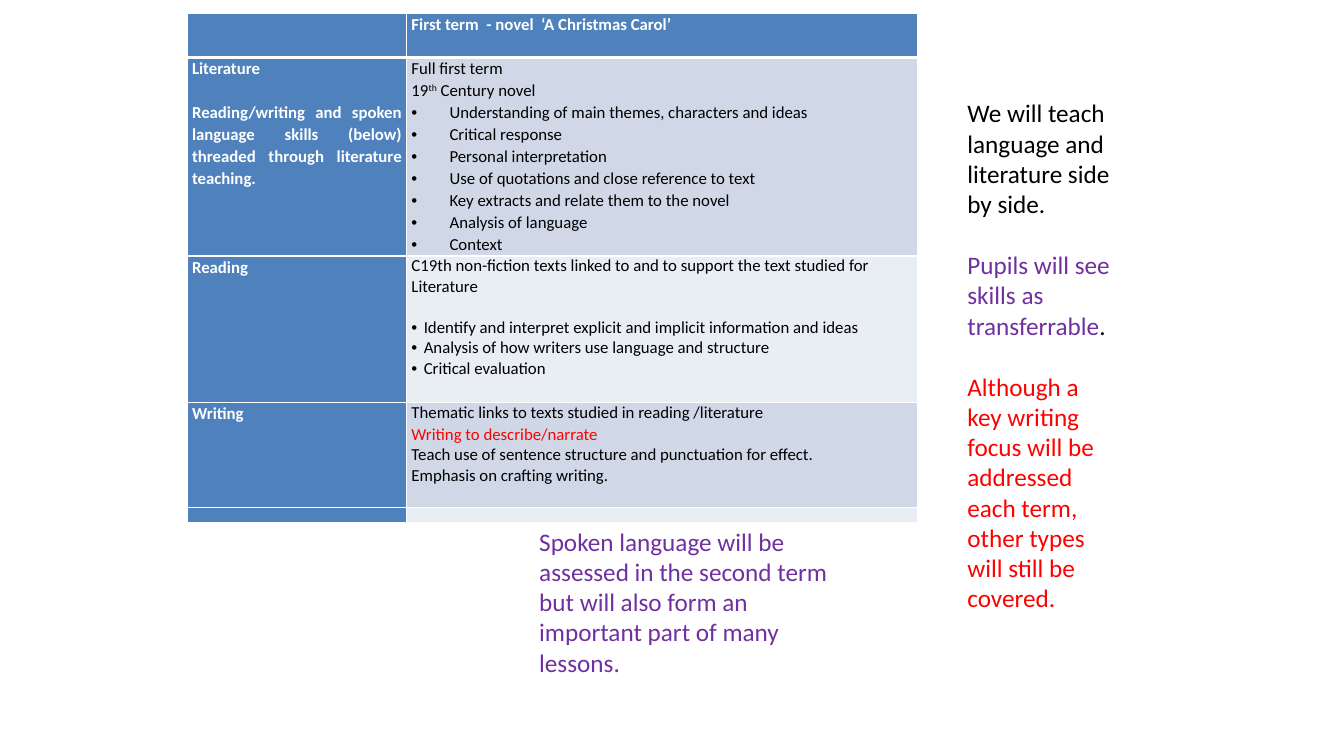
import pptx
import pptx.util
import pptx.dml.color
import pptx.enum.text
import pptx.oxml
from pptx.oxml.ns import nsdecls, qn

Cm, Pt = pptx.util.Cm, pptx.util.Pt
RGB = pptx.dml.color.RGBColor
ALIGN = pptx.enum.text.PP_ALIGN

WHITE = RGB(0xFF, 0xFF, 0xFF)
BLACK = RGB(0x00, 0x00, 0x00)
RED = RGB(0xFF, 0x00, 0x00)
PURPLE = RGB(0x70, 0x30, 0xA0)
BLUE = RGB(0x4F, 0x81, 0xBD)
BAND_DARK = RGB(0xD0, 0xD8, 0xE8)
BAND_LIGHT = RGB(0xE9, 0xED, 0xF4)

# Content: a paragraph is (text, format)
LOOSE = {"spacing": 1.07}
LABEL = {"spacing": 1.07, "bold": True, "color": WHITE}
JUSTIFIED = {**LABEL, "align": ALIGN.JUSTIFY}
WIDE_BULLET = {"spacing": 1.07, "bullet": 0.96}
BULLET = {"bullet": 0.31}

novel_skills = [
    "Understanding of main themes, characters and ideas",
    "Critical response",
    "Personal interpretation",
    "Use of quotations and close reference to text",
    "Key extracts and relate them to the novel",
    "Analysis of language",
    "Context",
]
rows = [  # height in cm, label cell, text cell
    (1.12, [], [("First term  - novel  ‘A Christmas Carol’", LABEL)]),
    (5.0,
     [("Literature", JUSTIFIED),
      ("Reading/writing and spoken language skills (below) threaded through literature teaching.",
       {**JUSTIFIED, "before": 15.7})],
     [("Full first term", LOOSE),
      ([("19", {}), ("th", {"baseline": 30000}), (" Century novel", {})], LOOSE)]
     + [(skill, WIDE_BULLET) for skill in novel_skills]),
    (3.69,
     [("Reading", LABEL)],
     [("C19th non-fiction texts linked to and to support the text studied for Literature", {}),
      ("Identify and interpret explicit and implicit information and ideas",
       {**BULLET, "before": 14.6}),
      ("Analysis of how writers use language and structure", BULLET),
      ("Critical evaluation", BULLET)]),
    (2.64,
     [("Writing", LABEL)],
     [("Thematic links to texts studied in reading /literature", {}),
      ("Writing to describe/narrate", {**LOOSE, "color": RED}),
      ("Teach use of sentence structure and punctuation for effect.", {}),
      ("Emphasis on crafting writing.", {})]),
    (0.38, [], []),
]
column_widths = [5.53, 12.87]

NOTE = {"size": 18}
GAP = {"size": 18, "before": 22}
notes = [  # left, top, width, height in cm, paragraphs
    (24.13, 2.34, 4.22, 13.33, [
        ("We will teach language and literature side by side.", NOTE),
        ([("Pupils will see skills as transferrable", {"color": PURPLE}), (".", {})], GAP),
        ("Although a key writing focus will be addressed each term, other types will still be covered.",
         {**GAP, "color": RED})]),
    (13.34, 13.13, 8.15, 4.11, [
        ("Spoken language will be assessed in the second term but will also form an "
         "important part of many lessons.", {**NOTE, "color": PURPLE})]),
]


def write(p, text, size=12, color=BLACK, bold=False, align=ALIGN.LEFT,
          spacing=1.0, before=0, bullet=None):
    """Fill a paragraph with a string or a list of (text, run format)."""
    if bullet:
        pPr = p._p.get_or_add_pPr()
        pPr.set("marL", str(Cm(bullet)))
        pPr.set("indent", str(-Cm(bullet)))
        pPr.append(pptx.oxml.parse_xml(f'<a:buFont {nsdecls("a")} typeface="Arial"/>'))
        pPr.append(pptx.oxml.parse_xml(f'<a:buChar {nsdecls("a")} char="•"/>'))
    p.alignment = align
    p.line_spacing = spacing
    if before:
        p.space_before = Pt(before)
    for part, style in [(text, {})] if isinstance(text, str) else text:
        r = p.add_run()
        r.text = part
        r.font.name = "Calibri"
        r.font.size = Pt(size)
        r.font.bold = bold
        r.font.color.rgb = style.get("color", color)
        if "baseline" in style:
            r.font._element.set("baseline", str(style["baseline"]))


def write_all(tf, paragraphs):
    tf.word_wrap = True
    for i, (text, style) in enumerate(paragraphs):
        write(tf.add_paragraph() if i else tf.paragraphs[0], text, **style)


def set_borders(cell, **widths):
    tcPr = cell._tc.get_or_add_tcPr()
    for i, side in enumerate("LRTB"):
        tcPr.insert(i, pptx.oxml.parse_xml(
            f'<a:ln{side} {nsdecls("a")} w="{Pt(widths.get(side, 1))}"><a:solidFill>'
            f'<a:srgbClr val="{WHITE}"/></a:solidFill></a:ln{side}>'))


prs = pptx.Presentation()
prs.slide_width, prs.slide_height = Cm(33.87), Cm(19.05)
s = prs.slides.add_slide(prs.slide_layouts[6])

# Term plan table
table = s.shapes.add_table(
    len(rows), len(column_widths), Cm(4.72), Cm(0.33),
    Cm(sum(column_widths)), Cm(sum(row[0] for row in rows))).table
for column, width in zip(table.columns, column_widths):
    column.width = Cm(width)
for i, (height, *cells) in enumerate(rows):
    table.rows[i].height = Cm(height)
    for j, paragraphs in enumerate(cells):
        cell = table.cell(i, j)
        cell.margin_left = cell.margin_right = Cm(0.12)
        cell.margin_top = cell.margin_bottom = 0
        cell.fill.solid()
        if i == 0 or j == 0:
            cell.fill.fore_color.rgb = BLUE
        else:
            cell.fill.fore_color.rgb = BAND_DARK if i % 2 else BAND_LIGHT
        set_borders(cell, **({"B": 3} if i == 0 else {"T": 3} if i == 1 else {}))
        write_all(cell.text_frame, paragraphs)
        if not paragraphs:  # small type keeps an empty row low
            p = cell.text_frame.paragraphs[0]._p
            p.append(pptx.oxml.parse_xml(f'<a:endParaRPr {nsdecls("a")} sz="800"/>'))

# Notes beside and below the table
for left, top, width, height, paragraphs in notes:
    sp = s.shapes.add_textbox(Cm(left), Cm(top), Cm(width), Cm(height))
    write_all(sp.text_frame, paragraphs)

prs.save("out.pptx")
